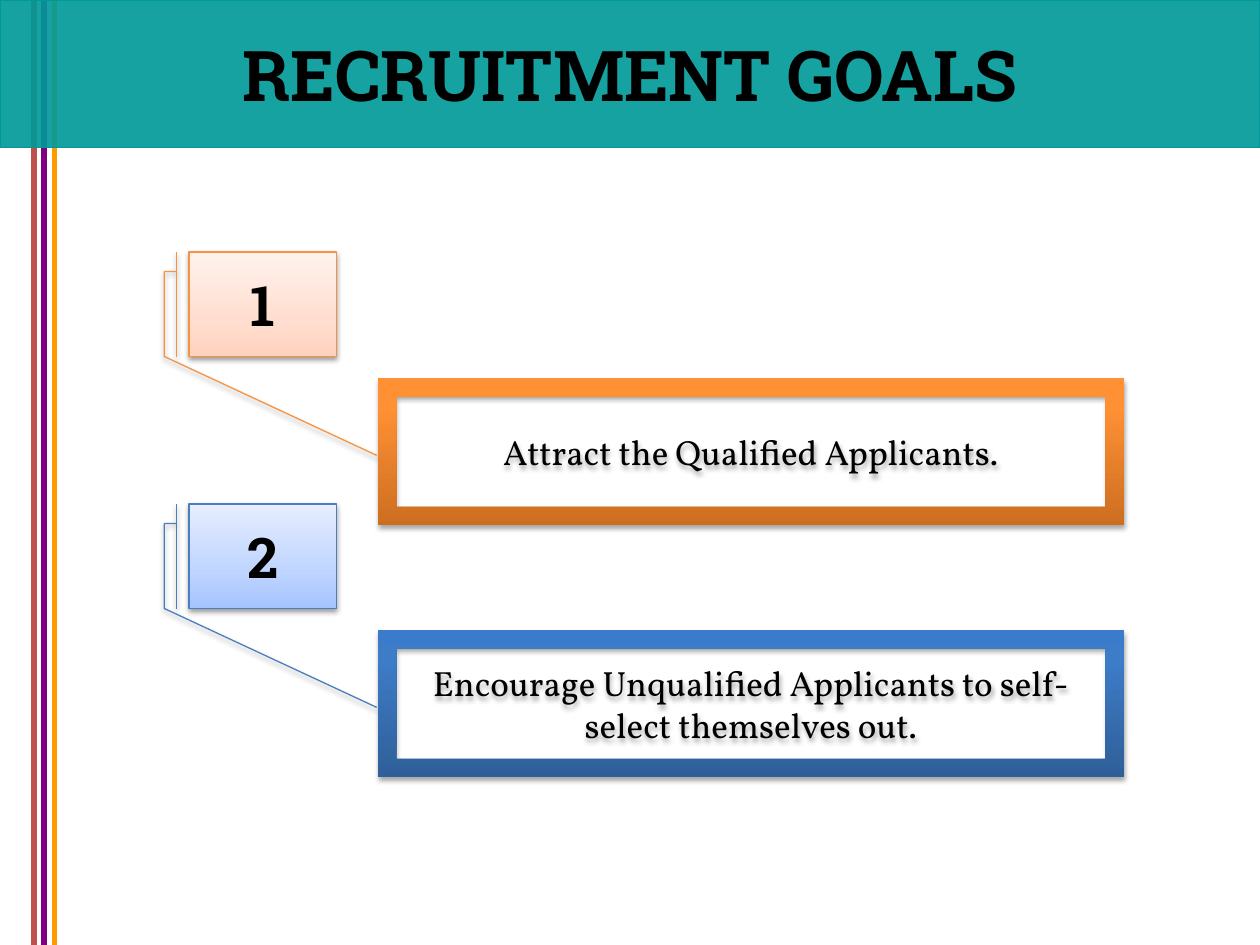
from lxml.etree import SubElement
from pptx import Presentation
from pptx.dml.color import RGBColor
from pptx.enum.shapes import MSO_CONNECTOR, MSO_SHAPE
from pptx.enum.text import MSO_ANCHOR, MSO_AUTO_SIZE, PP_ALIGN
from pptx.oxml.ns import qn
from pptx.util import Inches, Pt


def color(code):
    return RGBColor.from_string(code)


def add(node, tag, **attrs):
    return SubElement(node, qn(tag), {key: str(val) for key, val in attrs.items()})


class Deck:
    """Hold the style and the current slide."""

    head = "Roboto Slab"
    body = "Vollkorn"
    ink = "000000"
    bend = (0.188, -0.083, 0.188, -0.167, 1, -0.167, 1.945, 1.273)

    def __init__(self):
        self.prs = Presentation()
        self.prs.slide_width = Inches(10)
        self.prs.slide_height = Inches(7.5)
        self.slide = self.prs.slides.add_slide(self.prs.slide_layouts[5])

    def stripe(self, left, top, hue):
        x = Inches(left)
        line = self.slide.shapes.add_connector(
            MSO_CONNECTOR.STRAIGHT, x, Inches(top), x, Inches(7.5))
        line.line.color.rgb = color(hue)
        line.line.width = Pt(3)
        add(line._element.spPr, "a:effectLst")

    def label(self, shape, text, size, font, bold=False):
        frame = shape.text_frame
        frame.word_wrap = True
        frame.vertical_anchor = MSO_ANCHOR.MIDDLE
        para = frame.paragraphs[0]
        para.alignment = PP_ALIGN.CENTER
        run = para.add_run()
        run.text = text
        run.font.size = Pt(size)
        run.font.name = font
        run.font.bold = bold
        run.font.color.rgb = color(self.ink)

    def title(self, text, hue):
        box = self.slide.shapes.title
        box.left, box.top = Inches(0), Inches(0)
        box.width, box.height = Inches(10), Inches(1.17)
        box.fill.solid()
        box.fill.fore_color.rgb = color(hue)
        add(box._element.spPr.find(".//" + qn("a:srgbClr")), "a:alpha", val=91000)
        box.line.color.rgb = color(hue)
        box.line.width = Pt(0.75)
        self.label(box, text, 40, self.head, True)
        box.text_frame.word_wrap = False
        box.text_frame.auto_size = MSO_AUTO_SIZE.NONE
        self.slide.shapes._spTree.append(box._element)

    def shade(self, shape, stops):
        shape.fill.gradient()
        shape.fill.gradient_angle = 90
        ramp = shape._element.spPr.find(".//" + qn("a:gsLst"))
        for old in list(ramp):
            ramp.remove(old)
        for place, hue in stops:
            add(add(ramp, "a:gs", pos=place * 1000), "a:srgbClr", val=hue)

    def shadow(self, shape, dist, alpha):
        shape.shadow.inherit = False
        effect = shape._element.spPr.find(qn("a:effectLst"))
        cast = add(effect, "a:outerShdw", blurRad=Pt(3.1), dist=Pt(dist),
                   dir=5400000, rotWithShape=0)
        add(add(cast, "a:srgbClr", val=self.ink), "a:alpha", val=alpha * 1000)

    def badge(self, top, text, hues, edge):
        shape = self.slide.shapes.add_shape(
            MSO_SHAPE.LINE_CALLOUT_3_BORDER_AND_ACCENT_BAR,
            Inches(1.5), Inches(top), Inches(1.17), Inches(0.83))
        for i, value in enumerate(self.bend):
            shape.adjustments[i] = value
        self.shade(shape, zip((0, 35, 100), hues))
        shape.line.color.rgb = color(edge)
        shape.line.width = Pt(0.75)
        self.shadow(shape, 1.6, 38)
        self.label(shape, text, 32, self.head, True)

    def panel(self, top, text, hues):
        shape = self.slide.shapes.add_shape(
            MSO_SHAPE.FRAME, Inches(3), Inches(top), Inches(5.92), Inches(1.17))
        self.shade(shape, zip((0, 80, 100), hues))
        shape.line.fill.background()
        self.shadow(shape, 1.8, 35)
        self.label(shape, text, 20, self.body)

    def save(self):
        self.prs.save("out.pptx")


def main():
    deck = Deck()
    for left, top, hue in ((0.27, 0, "C0504D"), (0.43, 0, "FF9900"),
                           (0.35, -0.03, "800080")):
        deck.stripe(left, top, hue)
    deck.title("RECRUITMENT GOALS", "009999")
    goals = (
        ("Attract the Qualified Applicants.",
         ("FFD2BD", "FFDED0", "FFF2ED"), "F69240",
         ("CC6E20", "FF9034", "FF9136")),
        ("Encourage Unqualified Applicants to self-select themselves out.",
         ("A4C4FF", "BFD4FF", "E6EEFF"), "4B7EBC",
         ("2F5F99", "3D7CC7", "3A7CCB")),
    )
    for i, (text, pale, edge, deep) in enumerate(goals):
        top = 2 + 2 * i
        deck.badge(top, str(i + 1), pale, edge)
        deck.panel(top + 1, text, deep)
    deck.save()


if __name__ == "__main__":
    main()
